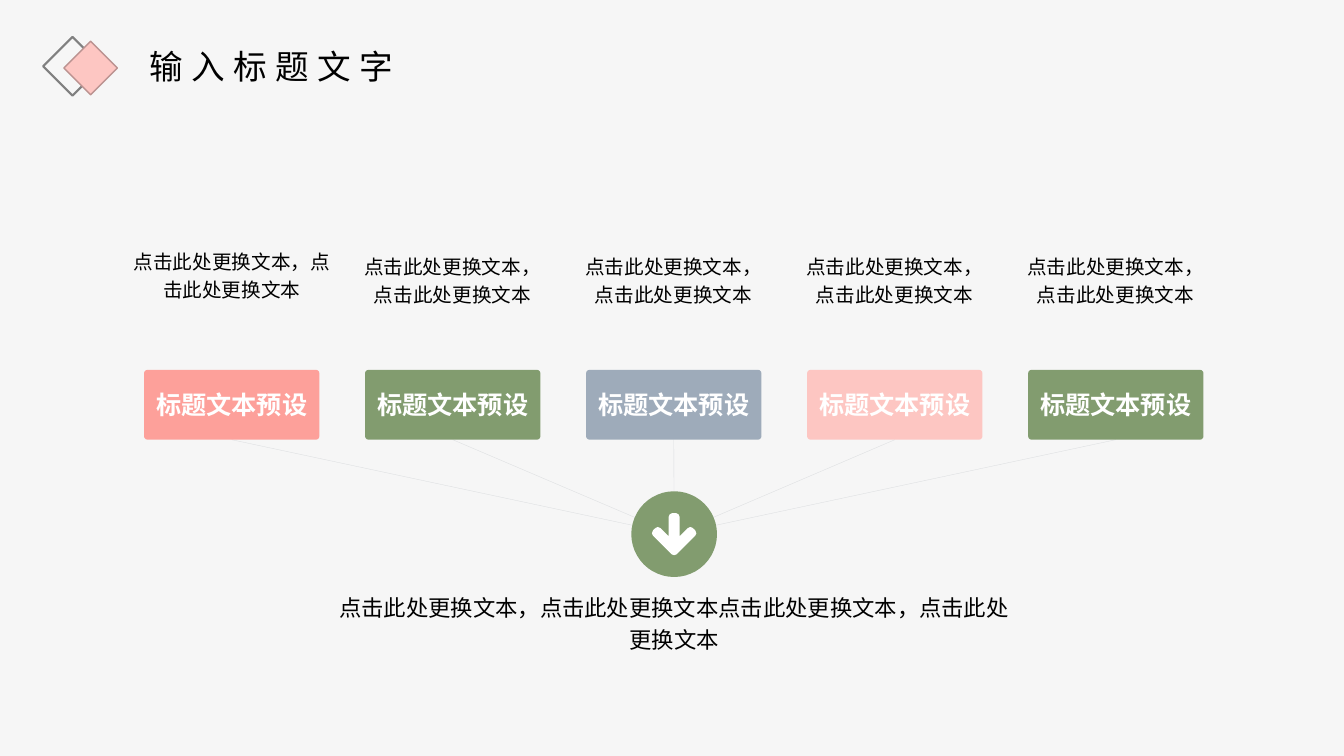
from lxml import etree
from pptx import Presentation
from pptx.dml.color import RGBColor
from pptx.enum.shapes import MSO_CONNECTOR, MSO_SHAPE
from pptx.enum.text import MSO_ANCHOR, MSO_AUTO_SIZE, PP_ALIGN
from pptx.oxml.ns import qn
from pptx.util import Cm, Pt

LEFT, CENTER = PP_ALIGN.LEFT, PP_ALIGN.CENTER
TOP, MIDDLE = MSO_ANCHOR.TOP, MSO_ANCHOR.MIDDLE
FONT = "Noto Sans CJK SC"
COLORS = {
    "background": "F6F6F6", "text": "000000", "white": "FFFFFF",
    "coral": "FDA09A", "green": "829C6F", "slate": "9EABBA", "pink": "FDC6C2",
    "thread": "DCDEE0", "gray": "808080", "rose": "BB9290",
}

TITLE = "输入标题文字"
CAPTION = "点击此处更换文本，点击此处更换文本"
SUMMARY = "点击此处更换文本，点击此处更换文本点击此处更换文本，点击此处更换文本"
CARDS = [
    ("标题文本预设", "coral", CAPTION),
    ("标题文本预设", "green", CAPTION),
    ("标题文本预设", "slate", CAPTION),
    ("标题文本预设", "pink", CAPTION),
    ("标题文本预设", "green", CAPTION),
]

CARD_LEFT, CARD_TOP, CARD_WIDTH, CARD_HEIGHT, CARD_STEP = 3.63, 9.32, 4.42, 1.76, 5.57
FIRST_CAPTION = (3.33, 6.17, 5.03, 2.49)
CAPTION_LEFT, CAPTION_TOP, CAPTION_WIDTH, CAPTION_HEIGHT = 3.37, 6.3, 4.93, 2.0
HUB_X, HUB_Y, HUB_SIZE = 16.99, 13.46, 2.16
ARROW_HALF = [
    (0.05, 12.93), (0.11, 12.96), (0.14, 13.03), (0.14, 13.51),
    (0.34, 13.31), (0.41, 13.28), (0.46, 13.3), (0.53, 13.36),
    (0.56, 13.44), (0.53, 13.5), (0.06, 13.97), (0, 13.99),
]


def color(name):
    return RGBColor.from_string(COLORS[name])


def write(shape, text, size, ink="text", align=CENTER, anchor=TOP,
          spacing=1.0, inset=None, bold=False, tracking=None, wrap=True):
    frame = shape.text_frame
    frame.text = text
    frame.word_wrap = wrap
    frame.auto_size = MSO_AUTO_SIZE.NONE
    frame.vertical_anchor = anchor
    if inset is not None:
        frame.margin_left = frame.margin_right = Cm(inset)
        frame.margin_top = frame.margin_bottom = Cm(inset)
    para = frame.paragraphs[0]
    para.alignment = align
    para.line_spacing = spacing
    span = para.runs[0]
    span.font.name = FONT
    span.font.size = Pt(size)
    span.font.bold = bold
    span.font.color.rgb = color(ink)
    properties = span.font._element
    etree.SubElement(properties, qn("a:ea")).set("typeface", FONT)
    if tracking:
        properties.set("spc", str(tracking * 100))


def paint(shape, fill=None, line=None, width=1):
    shape.shadow.inherit = False
    if fill:
        shape.fill.solid()
        shape.fill.fore_color.rgb = color(fill)
    else:
        shape.fill.background()
    if line:
        shape.line.color.rgb = color(line)
        shape.line.width = Pt(width)
    else:
        shape.line.fill.background()


def add_shape(page, kind, area, **style):
    shape = page.shapes.add_shape(kind, *map(Cm, area))
    paint(shape, **style)
    return shape


def add_text(page, area, text, size, **style):
    box = page.shapes.add_textbox(*map(Cm, area))
    write(box, text, size, spacing=1.2, **style)


def add_thread(page, x, y):
    thread = page.shapes.add_connector(
        MSO_CONNECTOR.STRAIGHT, Cm(HUB_X), Cm(HUB_Y), Cm(x), Cm(y))
    thread.line.color.rgb = color("thread")
    thread.line.width = Pt(0.25)
    etree.SubElement(thread._element.spPr, qn("a:effectLst"))


def add_arrow(page):
    right = [(Cm(HUB_X + dx), Cm(y)) for dx, y in ARROW_HALF]
    left = [(Cm(HUB_X - dx), Cm(y)) for dx, y in reversed(ARROW_HALF[:-1])]
    outline = right + left
    builder = page.shapes.build_freeform(*outline[0], scale=1.0)
    builder.add_line_segments(outline[1:], close=True)
    paint(builder.convert_to_shape(), fill="white")


def main():
    deck = Presentation()
    deck.slide_width, deck.slide_height = Cm(33.87), Cm(19.05)
    page = deck.slides.add_slide(deck.slide_layouts[5])
    page.background.fill.solid()
    page.background.fill.fore_color.rgb = color("background")

    title = page.shapes.title
    title.left, title.top, title.width, title.height = map(Cm, (3.51, 1.04, 9.14, 1.27))
    write(title, TITLE, 24, align=LEFT, anchor=MIDDLE, tracking=6)
    add_shape(page, MSO_SHAPE.DIAMOND, (1.09, 0.93, 1.48, 1.48), line="gray", width=1.5)
    add_shape(page, MSO_SHAPE.DIAMOND, (1.61, 1.04, 1.35, 1.35), fill="pink", line="rose")

    for index in range(len(CARDS)):
        middle = CARD_LEFT + index * CARD_STEP + CARD_WIDTH / 2
        add_thread(page, middle, CARD_TOP + CARD_HEIGHT)

    for index, (heading, fill, caption) in enumerate(CARDS):
        offset = index * CARD_STEP
        card = add_shape(page, MSO_SHAPE.ROUNDED_RECTANGLE,
                         (CARD_LEFT + offset, CARD_TOP, CARD_WIDTH, CARD_HEIGHT), fill=fill)
        card.adjustments[0] = 0.05
        write(card, heading, 18, ink="white", anchor=MIDDLE, inset=0.05, bold=True, wrap=False)
        area = (CAPTION_LEFT + offset, CAPTION_TOP, CAPTION_WIDTH, CAPTION_HEIGHT)
        add_text(page, area if index else FIRST_CAPTION, caption, 14, inset=0)

    add_shape(page, MSO_SHAPE.OVAL,
              (HUB_X - HUB_SIZE / 2, HUB_Y - HUB_SIZE / 2, HUB_SIZE, HUB_SIZE), fill="green")
    add_arrow(page)
    add_text(page, (8.03, 14.71, 17.93, 2.11), SUMMARY, 16)
    deck.save("out.pptx")


if __name__ == "__main__":
    main()
